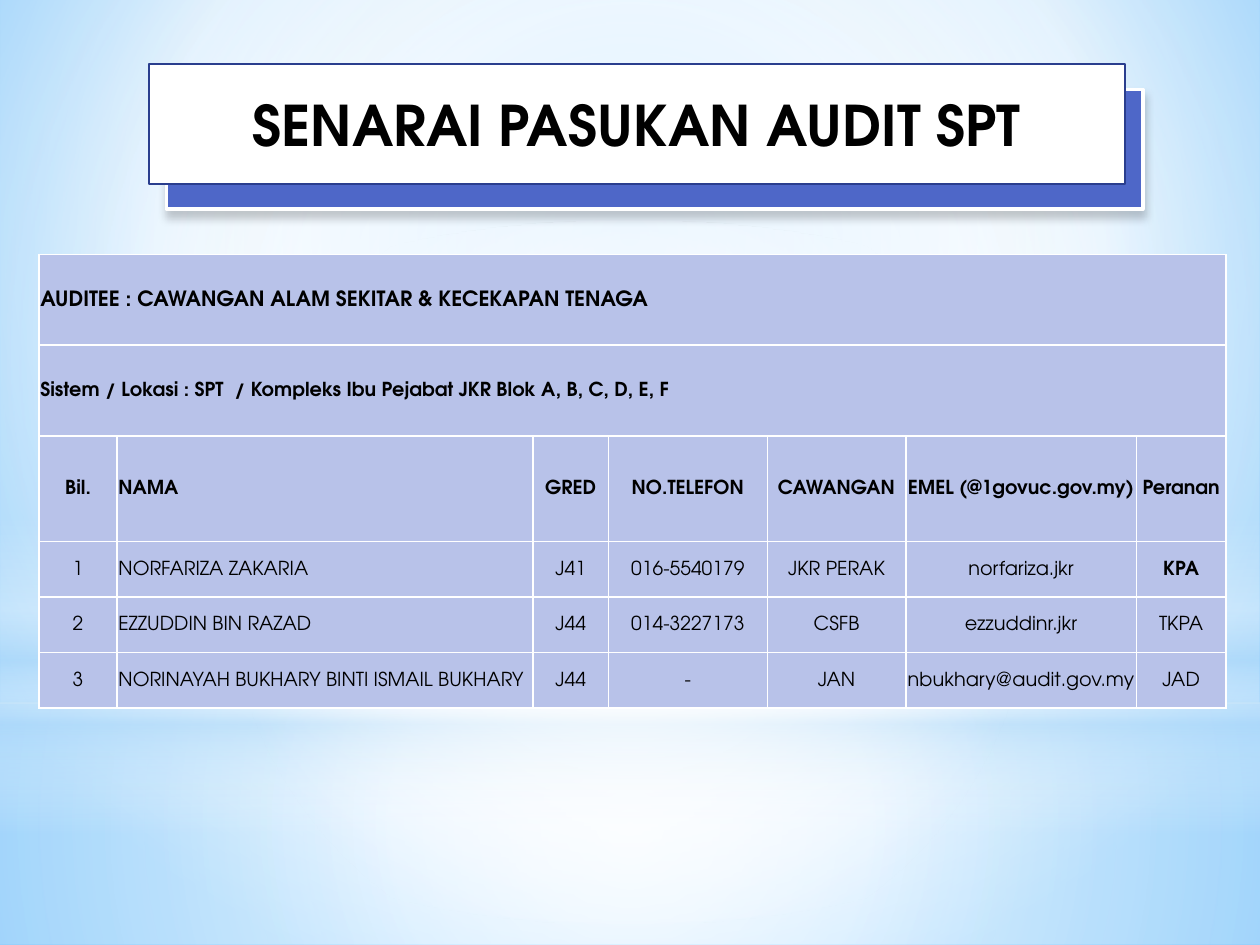
import pptx
import pptx.util
import pptx.dml.color
import pptx.enum.shapes
import pptx.enum.text
import pptx.oxml
import pptx.oxml.ns

Inches, Pt = pptx.util.Inches, pptx.util.Pt
RGBColor = pptx.dml.color.RGBColor
RECTANGLE = pptx.enum.shapes.MSO_SHAPE.RECTANGLE
OVAL = pptx.enum.shapes.MSO_SHAPE.OVAL
ALIGN = pptx.enum.text.PP_ALIGN
MIDDLE = pptx.enum.text.MSO_ANCHOR.MIDDLE

FONT = "TeX Gyre Adventor"
BLACK = RGBColor(0x00, 0x00, 0x00)
WHITE = RGBColor(0xFF, 0xFF, 0xFF)
PALE_BLUE = RGBColor(0xB4, 0xDC, 0xFA)
SKY = RGBColor(0x9E, 0xD5, 0xFF)
DEEP_SKY = RGBColor(0x5B, 0xB9, 0xFF)
INDIGO = RGBColor(0x4E, 0x67, 0xC8)
NAVY = RGBColor(0x2A, 0x3E, 0x8E)
LAVENDER = RGBColor(0xB8, 0xC2, 0xE9)

TITLE = "SENARAI PASUKAN AUDIT SPT"
BANNERS = [
    ("AUDITEE : CAWANGAN ALAM SEKITAR & KECEKAPAN TENAGA", 12),
    ("Sistem / Lokasi : SPT  / Kompleks Ibu Pejabat JKR Blok A, B, C, D, E, F", 11),
]
HEADINGS = ["Bil.", "NAMA", "GRED", "NO.TELEFON", "CAWANGAN", "EMEL (@1govuc.gov.my)", "Peranan"]
MEMBERS = [
    ["1", "NORFARIZA ZAKARIA", "J41", "016-5540179", "JKR PERAK", "norfariza.jkr", "KPA"],
    ["2", "EZZUDDIN BIN RAZAD", "J44", "014-3227173", "CSFB", "ezzuddinr.jkr", "TKPA"],
    ["3", "NORINAYAH BUKHARY BINTI ISMAIL BUKHARY", "J44", "-", "JAN", "nbukhary@audit.gov.my", "JAD"],
]
LEADER_ROLE = "KPA"
COLUMN_WIDTHS = [0.62, 3.3, 0.6, 1.26, 1.1, 1.83, 0.71]
ROW_HEIGHTS = [0.72] * 2 + [0.84] + [0.44] * 3
TABLE_LEFT, TABLE_TOP = 0.31, 2.02

# Gradient stops: position, colour, opacity (all in percent)
BACKGROUND_STOPS = [(0, SKY, 100), (60, WHITE, 100), (100, DEEP_SKY, 100)]
CENTRE = (50, 50, 50, 50)
HORIZON = 5.58
# Shape, top, height, stops, focus of a radial gradient (None: top to bottom)
BACKDROP = [
    (RECTANGLE, HORIZON, 7.5 - HORIZON,
     [(0, WHITE, 91), (37, WHITE, 76), (100, PALE_BLUE, 79)], CENTRE),
    (RECTANGLE, 0, HORIZON,
     [(0, WHITE, 89), (48, WHITE, 62), (100, PALE_BLUE, 79)], CENTRE),
    (RECTANGLE, 4.12, 2.5,
     [(0, WHITE, 0), (29, WHITE, 30), (45, PALE_BLUE, 40), (55, WHITE, 26),
      (65, PALE_BLUE, 60), (100, WHITE, 0)], None),
    (OVAL, 1.75, 5.58, [(0, WHITE, 100), (56, WHITE, 0)], CENTRE),
]

TITLE_BOX = (1.18, 0.51, 7.75, 0.95)
PLATE_OFFSET = (0.14, 0.2)


def drawing_xml(tag, attributes, content):
    namespace = pptx.oxml.ns.nsdecls("a")
    return pptx.oxml.parse_xml(f"<a:{tag} {namespace} {attributes}>{content}</a:{tag}>")


def set_gradient(owner, element, stops, focus):
    """Swap the owner's solid fill, the first one in element, for a gradient."""
    owner.fill.solid()
    stop_list = "".join(
        f'<a:gs pos="{position * 1000}"><a:srgbClr val="{colour}">'
        f'<a:alpha val="{opacity * 1000}"/></a:srgbClr></a:gs>'
        for position, colour, opacity in stops)
    if focus:
        left, top, right, bottom = (1000 * share for share in focus)
        direction = (f'<a:path path="circle"><a:fillToRect l="{left}" t="{top}" '
                     f'r="{right}" b="{bottom}"/></a:path>')
    else:
        direction = '<a:lin ang="5400000" scaled="0"/>'
    gradient = drawing_xml("gradFill", 'rotWithShape="1"',
                           f"<a:gsLst>{stop_list}</a:gsLst>{direction}")
    solid = element.find(".//" + pptx.oxml.ns.qn("a:solidFill"))
    solid.getparent().replace(solid, gradient)


def set_fill_and_line(shape, fill_colour, line_colour, line_width):
    shape.fill.solid()
    shape.fill.fore_color.rgb = fill_colour
    shape.line.color.rgb = line_colour
    shape.line.width = Pt(line_width)


def style_text(text_frame, size, bold, alignment):
    paragraph = text_frame.paragraphs[0]
    paragraph.alignment = alignment
    paragraph.font.name = FONT
    paragraph.font.size = Pt(size)
    paragraph.font.bold = bold
    paragraph.font.color.rgb = BLACK


def add_backdrop(slide):
    set_gradient(slide.background, slide.background._cSld, BACKGROUND_STOPS, (20, 10, 20, 60))
    for kind, top, height, stops, focus in BACKDROP:
        shape = slide.shapes.add_shape(kind, 0, Inches(top), Inches(10), Inches(height))
        shape.shadow.inherit = False
        shape.line.fill.background()
        set_gradient(shape, shape._element.spPr, stops, focus)


def fill_cell(cell, text, size=11, bold=False, alignment=ALIGN.LEFT):
    cell.text = text
    cell.vertical_anchor = MIDDLE
    cell.margin_left = cell.margin_right = cell.margin_top = Inches(0.01)
    cell.margin_bottom = 0
    style_text(cell.text_frame, size, bold, alignment)


def add_team_table(slide):
    frame = slide.shapes.add_table(
        len(ROW_HEIGHTS), len(COLUMN_WIDTHS), Inches(TABLE_LEFT), Inches(TABLE_TOP),
        Inches(sum(COLUMN_WIDTHS)), Inches(sum(ROW_HEIGHTS)))
    table = frame.table
    table.first_row = table.horz_banding = False
    for column, width in zip(table.columns, COLUMN_WIDTHS):
        column.width = Inches(width)
    for row, height in zip(table.rows, ROW_HEIGHTS):
        row.height = Inches(height)

    for row, (text, size) in enumerate(BANNERS):
        table.cell(row, 0).merge(table.cell(row, len(COLUMN_WIDTHS) - 1))
        fill_cell(table.cell(row, 0), text, size, bold=True)
    for row, texts in enumerate([HEADINGS] + MEMBERS, start=len(BANNERS)):
        for column, text in enumerate(texts):
            bold = texts is HEADINGS or text == LEADER_ROLE
            alignment = ALIGN.LEFT if HEADINGS[column] == "NAMA" else ALIGN.CENTER
            fill_cell(table.cell(row, column), text, 11, bold, alignment)

    border = f'<a:solidFill><a:srgbClr val="{WHITE}"/></a:solidFill>'
    for cell in table.iter_cells():
        cell.fill.solid()
        cell.fill.fore_color.rgb = LAVENDER
        properties = cell._tc.get_or_add_tcPr()
        for index, side in enumerate(("lnL", "lnR", "lnT", "lnB")):
            properties.insert(index, drawing_xml(side, f'w="{Pt(1)}"', border))


def add_title(slide):
    left, top, width, height = TITLE_BOX
    plate = slide.shapes.add_shape(
        RECTANGLE, Inches(left + PLATE_OFFSET[0]), Inches(top + PLATE_OFFSET[1]),
        Inches(width), Inches(height))
    set_fill_and_line(plate, INDIGO, WHITE, 2)
    plate._element.spPr.append(drawing_xml(
        "effectLst", "",
        f'<a:outerShdw blurRad="{Pt(5)}" dist="{Pt(4)}" dir="5400000" rotWithShape="0">'
        f'<a:srgbClr val="{BLACK}"><a:alpha val="20000"/></a:srgbClr></a:outerShdw>'))

    title = slide.shapes.title
    title.left, title.top, title.width, title.height = map(Inches, TITLE_BOX)
    set_fill_and_line(title, WHITE, NAVY, 1.25)
    title.text_frame.text = TITLE
    title.text_frame.vertical_anchor = MIDDLE
    title.text_frame.auto_size = pptx.enum.text.MSO_AUTO_SIZE.NONE
    style_text(title.text_frame, 32, True, ALIGN.CENTER)
    plate._element.addnext(title._element)  # bring the title in front of its plate


def main():
    presentation = pptx.Presentation()
    presentation.slide_width, presentation.slide_height = Inches(10), Inches(7.5)
    slide = presentation.slides.add_slide(presentation.slide_layouts.get_by_name("Title Only"))
    add_backdrop(slide)
    add_team_table(slide)
    add_title(slide)
    presentation.save("out.pptx")


if __name__ == "__main__":
    main()
